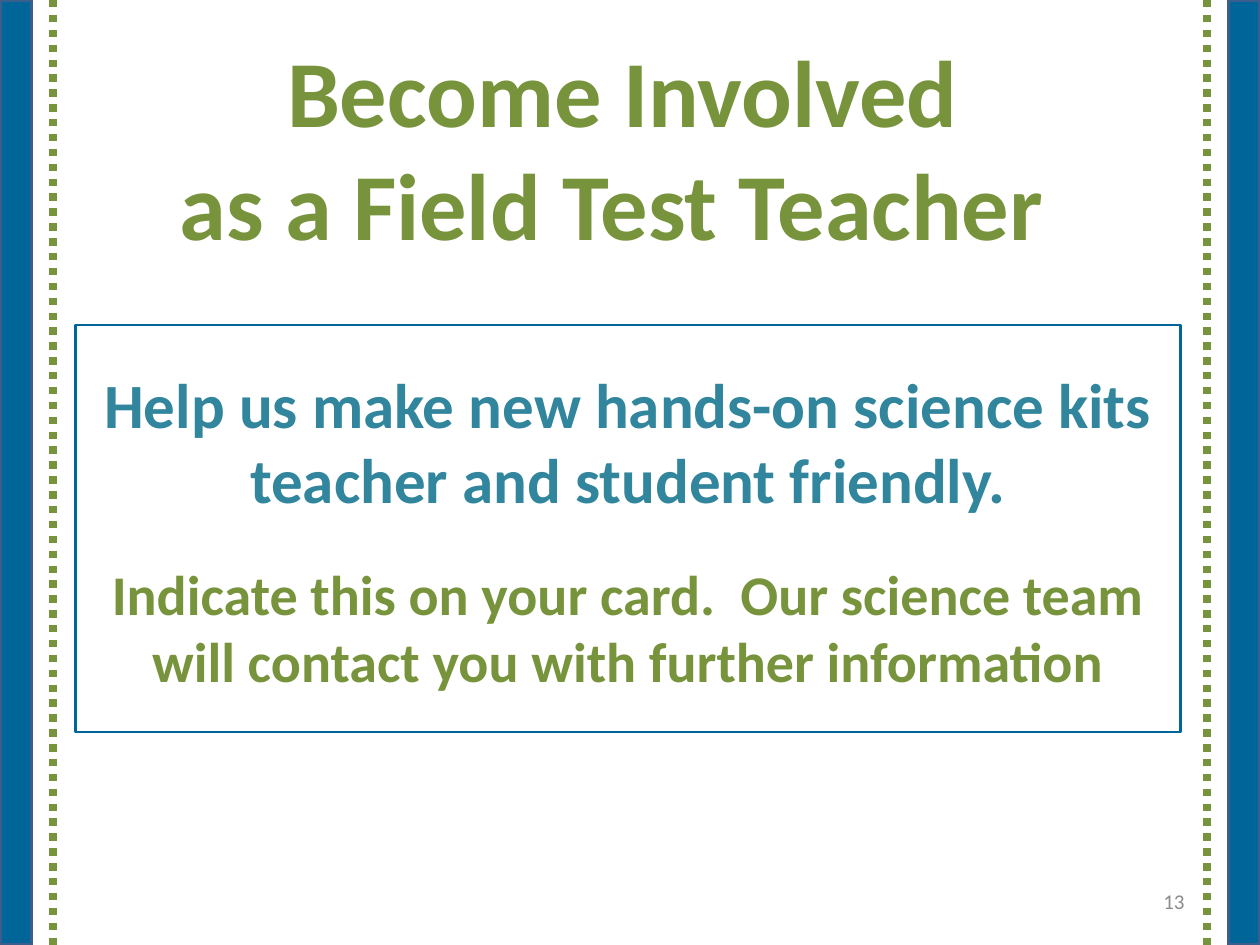
"""Build the slide that invites teachers to take part in field tests."""
from lxml.etree import SubElement
from pptx import Presentation
from pptx.dml.color import RGBColor
from pptx.enum.dml import MSO_LINE
from pptx.enum.shapes import MSO_CONNECTOR, MSO_SHAPE
from pptx.enum.text import MSO_ANCHOR, PP_ALIGN
from pptx.oxml.ns import qn
from pptx.util import Inches, Pt

COLORS = {
    "band": "006699",
    "band_edge": "3A5F8C",
    "green": "77933C",
    "teal": "31859C",
    "gray": "8C8C8C",
}


def rgb(name):
    return RGBColor.from_string(COLORS[name])


def write(shape, text, size, color, bold=True, align=PP_ALIGN.CENTER, before=0):
    frame = shape.text_frame
    frame.word_wrap = True
    paragraph = frame.paragraphs[0]
    if paragraph.runs:
        paragraph = frame.add_paragraph()
        paragraph.space_before = Pt(before)
    paragraph.alignment = align
    run = paragraph.add_run()
    run.text = text
    run.font.name = "Calibri"
    run.font.size = Pt(size)
    run.font.bold = bold
    run.font.color.rgb = rgb(color)


presentation = Presentation()
presentation.slide_width = Inches(10)
presentation.slide_height = Inches(7.5)
width, height = presentation.slide_width, presentation.slide_height
slide = presentation.slides.add_slide(presentation.slide_layouts[6])
shapes = slide.shapes

band_width = Inches(0.25)
dots_inset = Inches(0.42)
for band_left, dots_x in ((0, dots_inset), (width - band_width, width - dots_inset)):
    band = shapes.add_shape(MSO_SHAPE.RECTANGLE, band_left, 0, band_width, height)
    band.shadow.inherit = False
    band.fill.solid()
    band.fill.fore_color.rgb = rgb("band")
    band.line.color.rgb = rgb("band_edge")
    band.line.width = Pt(2)

    dots = shapes.add_connector(MSO_CONNECTOR.STRAIGHT, dots_x, 0, dots_x, height)
    dots.line.color.rgb = rgb("green")
    dots.line.width = Pt(4.25)
    dots.line.dash_style = MSO_LINE.ROUND_DOT
    SubElement(dots._element.spPr, qn("a:effectLst"))

title = shapes.add_textbox(Inches(0.69), Inches(0.21), Inches(8.5), Inches(1.93))
for line in ("Become Involved", "as a Field Test Teacher "):
    write(title, line, size=54, color="green")

invitation = shapes.add_shape(
    MSO_SHAPE.RECTANGLE, Inches(0.6), Inches(2.58), Inches(8.77), Inches(3.23)
)
invitation.shadow.inherit = False
invitation.fill.background()
invitation.line.color.rgb = rgb("band")
invitation.line.width = Pt(1.5)
invitation.text_frame.vertical_anchor = MSO_ANCHOR.TOP
invitation.text_frame.margin_top = Inches(0.32)
write(
    invitation,
    "Help us make new hands-on science kits teacher and student friendly.",
    size=36,
    color="teal",
)
write(
    invitation,
    "Indicate this on your card.  Our science team will contact you with further information",
    size=32,
    color="green",
    before=24.4,
)

number = shapes.add_textbox(Inches(7.17), Inches(6.95), Inches(2.33), Inches(0.4))
number.text_frame.vertical_anchor = MSO_ANCHOR.MIDDLE
write(number, "13", size=12, color="gray", bold=False, align=PP_ALIGN.RIGHT)

presentation.save("out.pptx")
